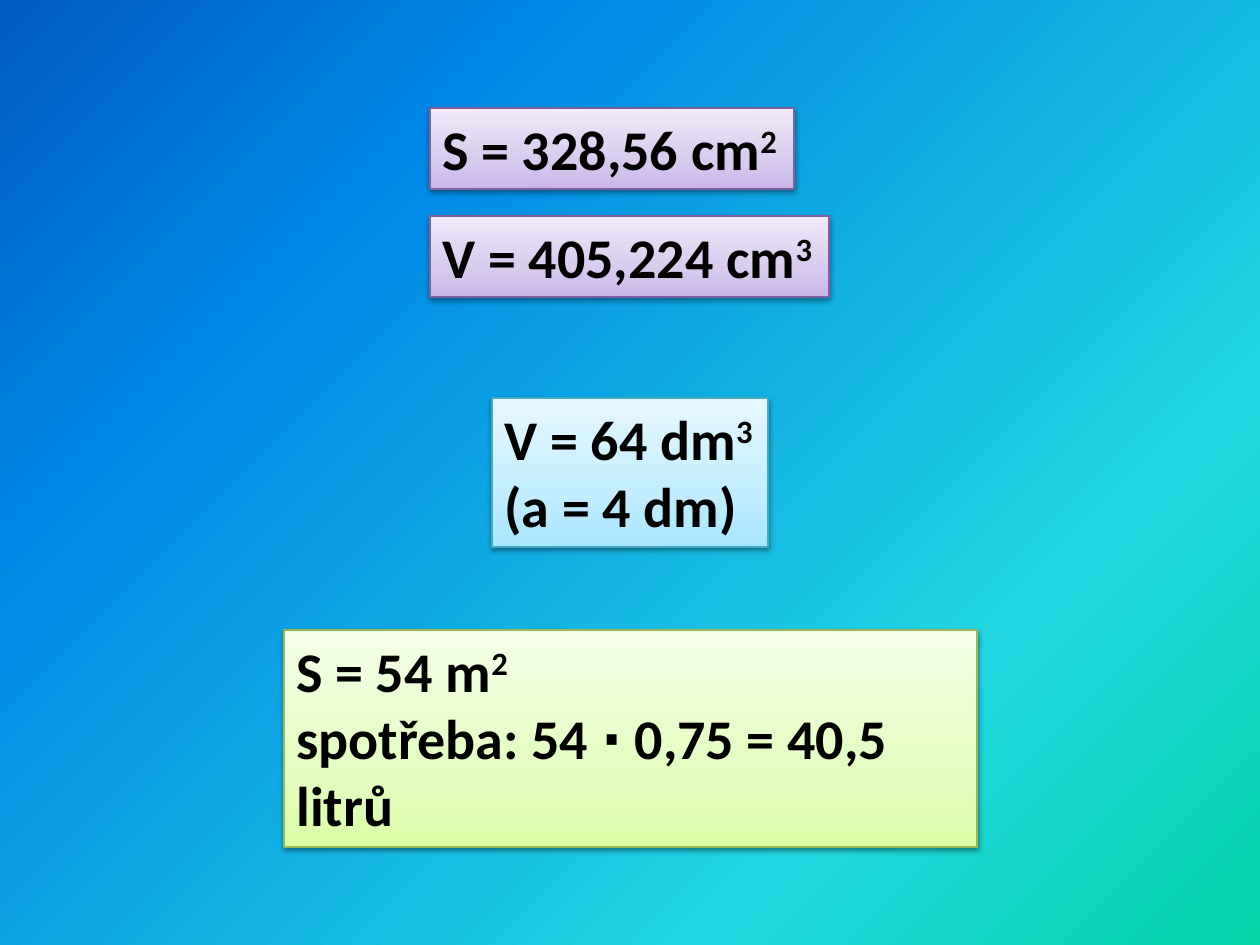
import pptx
import pptx.dml.color
import pptx.enum.text
import pptx.oxml.ns
import pptx.util
from lxml import etree

EMU_PER_PX = 914400 / 126
qn = pptx.oxml.ns.qn


def px(length):
    return pptx.util.Emu(round(length * EMU_PER_PX))


def color(value):
    return pptx.dml.color.RGBColor.from_string(value)


class AnswerSlide:
    font_name = "Calibri"
    font_size = 32
    text_color = "000000"

    def __init__(self, presentation):
        self.slide = presentation.slides.add_slide(presentation.slide_layouts[6])

    def gradient(self, fill, element, stops, angle):
        fill.gradient()
        fill.gradient_angle = angle
        stop_list = element.find(".//" + qn("a:gsLst"))
        for stop in list(stop_list):
            stop_list.remove(stop)
        for position, value in stops:
            stop = etree.SubElement(stop_list, qn("a:gs"), pos=str(position * 1000))
            etree.SubElement(stop, qn("a:srgbClr"), val=value)

    def background(self, stops):
        self.gradient(self.slide.background.fill, self.slide.element, stops, 135)

    def shadow(self, shape):
        shape.shadow.inherit = False
        effects = shape.element.find(".//" + qn("a:effectLst"))
        outer = etree.SubElement(
            effects, qn("a:outerShdw"), blurRad="40000", dist="20000",
            dir="5400000", rotWithShape="0")
        tint = etree.SubElement(outer, qn("a:srgbClr"), val="000000")
        etree.SubElement(tint, qn("a:alpha"), val="38000")

    def answer_box(self, bounds, palette, lines, wrap=False):
        fill_colors, line_color = palette
        shape = self.slide.shapes.add_textbox(*map(px, bounds))
        self.gradient(shape.fill, shape.element, zip((0, 35, 100), fill_colors), 90)
        shape.line.color.rgb = color(line_color)
        shape.line.width = pptx.util.Pt(0.75)
        self.shadow(shape)
        text_frame = shape.text_frame
        text_frame.word_wrap = wrap
        text_frame.auto_size = pptx.enum.text.MSO_AUTO_SIZE.SHAPE_TO_FIT_TEXT
        for index, (text, exponent) in enumerate(lines):
            paragraph = text_frame.add_paragraph() if index else text_frame.paragraphs[0]
            paragraph.text = text
            if exponent:
                run = paragraph.add_run()
                run.text = exponent
                run.font._element.set("baseline", "30000")
            for run in paragraph.runs:
                run.font.name = self.font_name
                run.font.size = pptx.util.Pt(self.font_size)
                run.font.bold = True
                run.font.color.rgb = color(self.text_color)


def main():
    presentation = pptx.Presentation()
    presentation.slide_width = px(1260)
    presentation.slide_height = px(945)

    purple = (("C9B5E8", "D8CBEE", "F0EAF9"), "7D60A0")
    blue = (("A7E6FF", "C1EDFF", "E7F8FF"), "46AAC5")
    green = (("DAFDA7", "E4FCC2", "F5FFE7"), "98B955")

    answers = AnswerSlide(presentation)
    answers.background([(0, "03D4A8"), (25, "21D6E0"), (75, "0087E6"), (100, "005CBF")])
    answers.answer_box((430, 108, 364, 81), purple, [("S = 328,56 cm", "2")])
    answers.answer_box((430, 216, 399, 81), purple, [("V = 405,224 cm", "3")])
    answers.answer_box((492, 398, 276, 149), blue,
                       [("V = 64 dm", "3"), ("(a = 4 dm)", "")])
    answers.answer_box((284, 630, 693, 217), green,
                       [("S = 54 m", "2"), ("spotřeba: 54 ⋅ 0,75 = 40,5 litrů", "")],
                       wrap=True)
    presentation.save("out.pptx")


if __name__ == "__main__":
    main()
